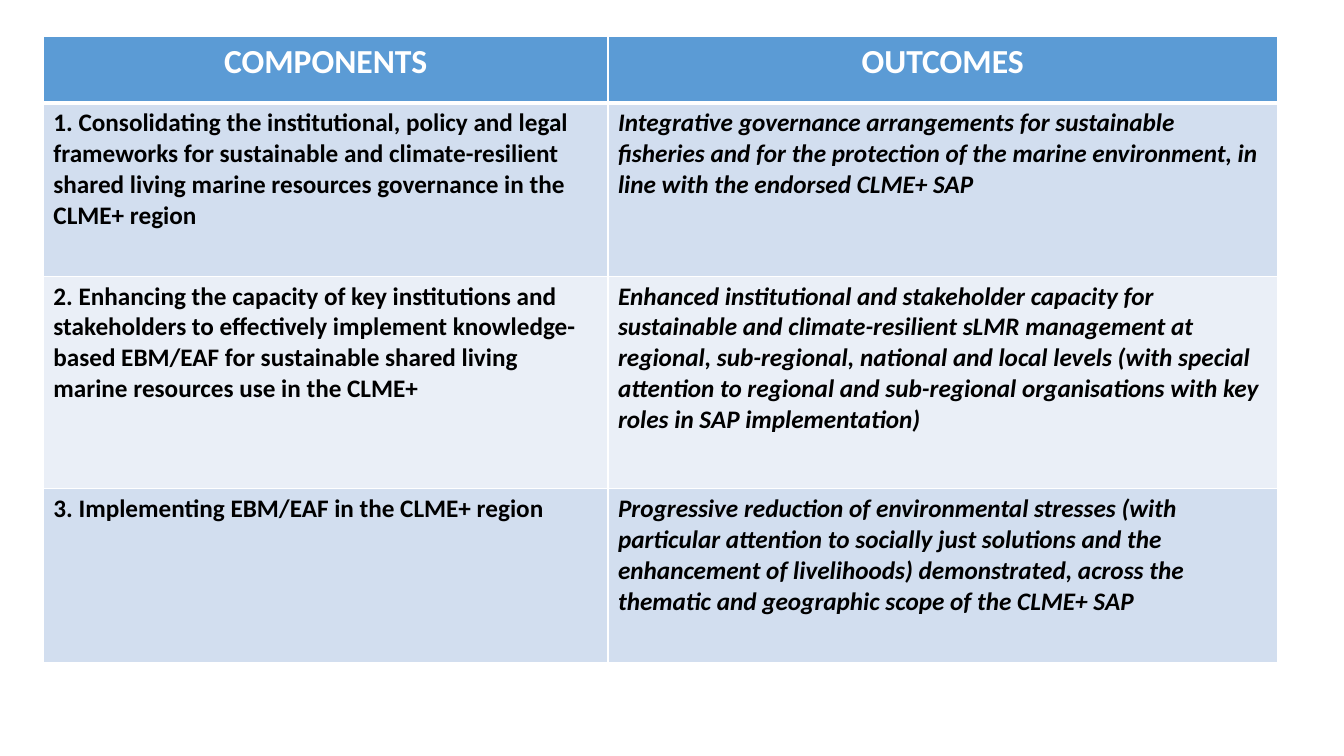
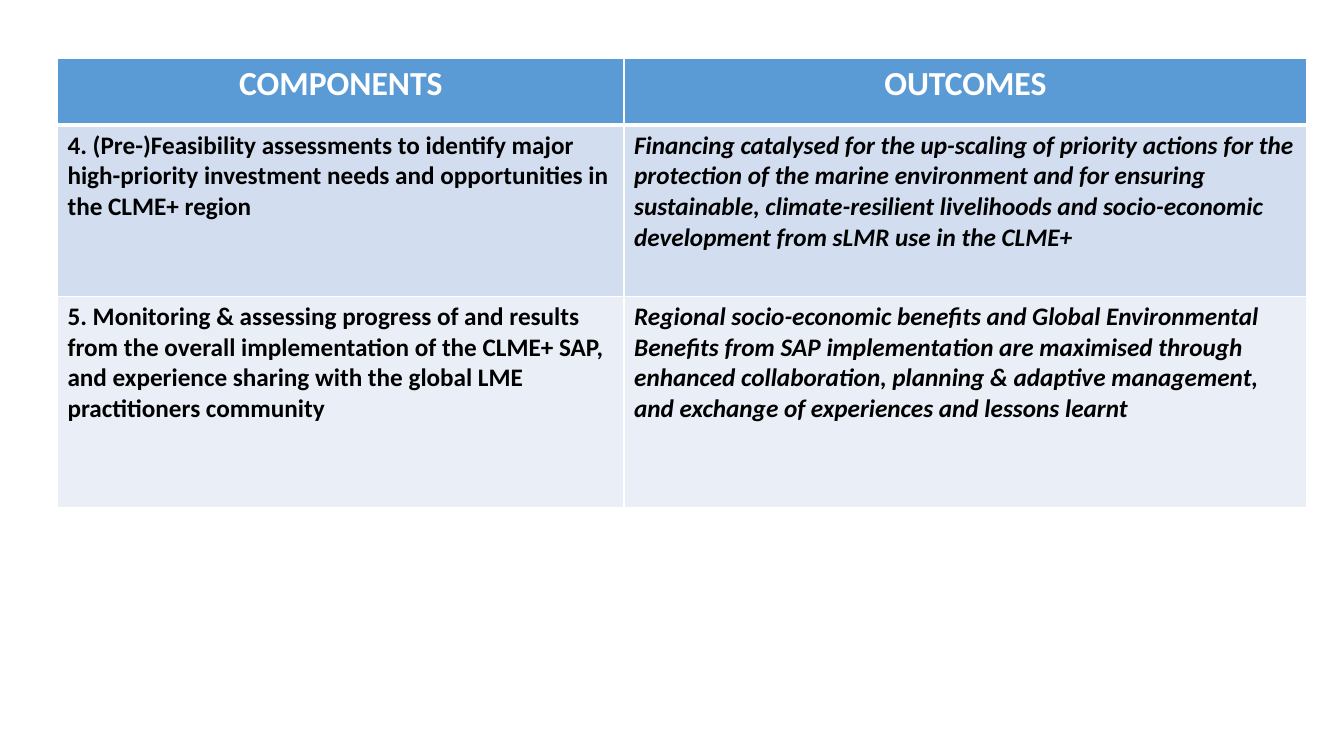
from lxml.etree import SubElement
from pptx import Presentation
from pptx.dml.color import RGBColor
from pptx.enum.text import PP_ALIGN
from pptx.oxml.ns import qn
from pptx.util import Inches, Pt

COLORS = {
    "header": "5B9BD5",
    "band_dark": "D2DEEF",
    "band_light": "EAEFF7",
    "white": "FFFFFF",
    "black": "000000",
}
FONT = "Calibri"
HEADINGS = ("COMPONENTS", "OUTCOMES")

SLIDES = [
    {
        "origin": (0.43, 0.36),
        "columns": (5.6, 6.64),
        "rows": (0.66, 1.72, 2.11, 1.72),
        "content": [
            ("1. Consolidating the institutional, policy and legal frameworks for "
             "sustainable and climate-resilient shared living marine resources "
             "governance in the CLME+ region",
             "Integrative governance arrangements for sustainable fisheries and for "
             "the protection of the marine environment, in line with the endorsed "
             "CLME+ SAP"),
            ("2. Enhancing the capacity of key institutions and stakeholders to "
             "effectively implement knowledge-based EBM/EAF for sustainable shared "
             "living marine resources use in the CLME+",
             "Enhanced institutional and stakeholder capacity for sustainable and "
             "climate-resilient sLMR management at regional, sub-regional, national "
             "and local levels (with special attention to regional and sub-regional "
             "organisations with key roles in SAP implementation)"),
            ("3. Implementing EBM/EAF in the CLME+ region",
             "Progressive reduction of environmental stresses (with particular "
             "attention to socially just solutions and the enhancement of "
             "livelihoods) demonstrated, across the thematic and geographic scope "
             "of the CLME+ SAP"),
        ],
    },
    {
        "origin": (0.57, 0.58),
        "columns": (5.62, 6.77),
        "rows": (0.66, 1.7, 2.1),
        "content": [
            ("4. (Pre-)Feasibility assessments to identify major high-priority "
             "investment needs and opportunities in the CLME+ region",
             "Financing catalysed for the up-scaling of priority actions for the "
             "protection of the marine environment and for ensuring sustainable, "
             "climate-resilient livelihoods and socio-economic development from "
             "sLMR use in the CLME+"),
            ("5. Monitoring & assessing progress of and results from the overall "
             "implementation of the CLME+ SAP, and experience sharing with the "
             "global LME practitioners community",
             "Regional socio-economic benefits and Global Environmental Benefits "
             "from SAP implementation are maximised through enhanced collaboration, "
             "planning & adaptive management, and exchange of experiences and "
             "lessons learnt"),
        ],
    },
]


def set_borders(cell, top, bottom):
    """Draw white cell borders; top and bottom are widths in points."""
    properties = cell._tc.get_or_add_tcPr()
    for side, width in (("L", 1), ("R", 1), ("T", top), ("B", bottom)):
        line = SubElement(properties, qn(f"a:ln{side}"), w=str(Pt(width)))
        fill = SubElement(line, qn("a:solidFill"))
        SubElement(fill, qn("a:srgbClr"), val=COLORS["white"])


def write_cell(cell, text, fill, color, size, align=PP_ALIGN.LEFT, italic=False):
    cell.fill.solid()
    cell.fill.fore_color.rgb = RGBColor.from_string(COLORS[fill])
    para = cell.text_frame.paragraphs[0]
    para.alignment = align
    span = para.add_run()
    span.text = text
    span.font.name = FONT
    span.font.size = Pt(size)
    span.font.bold = True
    span.font.italic = italic
    span.font.color.rgb = RGBColor.from_string(COLORS[color])


def add_outcome_table(page, origin, columns, rows, content):
    box = [Inches(value) for value in (*origin, sum(columns), sum(rows))]
    table = page.shapes.add_table(len(rows), len(columns), *box).table
    for column, width in zip(table.columns, columns):
        column.width = Inches(width)
    for row, height in zip(table.rows, rows):
        row.height = Inches(height)

    for row_index, texts in enumerate([HEADINGS, *content]):
        for column_index, text in enumerate(texts):
            cell = table.cell(row_index, column_index)
            set_borders(cell, top=3 if row_index == 1 else 1,
                        bottom=3 if row_index == 0 else 1)
            if row_index == 0:
                write_cell(cell, text, "header", "white", 24, PP_ALIGN.CENTER)
            else:
                band = "band_dark" if row_index % 2 else "band_light"
                write_cell(cell, text, band, "black", 18, italic=column_index == 1)


def main():
    deck = Presentation()
    deck.slide_width, deck.slide_height = Inches(13.33), Inches(7.5)
    blank_layout = deck.slide_layouts.get_by_name("Blank")
    for slide in SLIDES:
        add_outcome_table(deck.slides.add_slide(blank_layout), **slide)
    deck.save("out.pptx")


if __name__ == "__main__":
    main()
